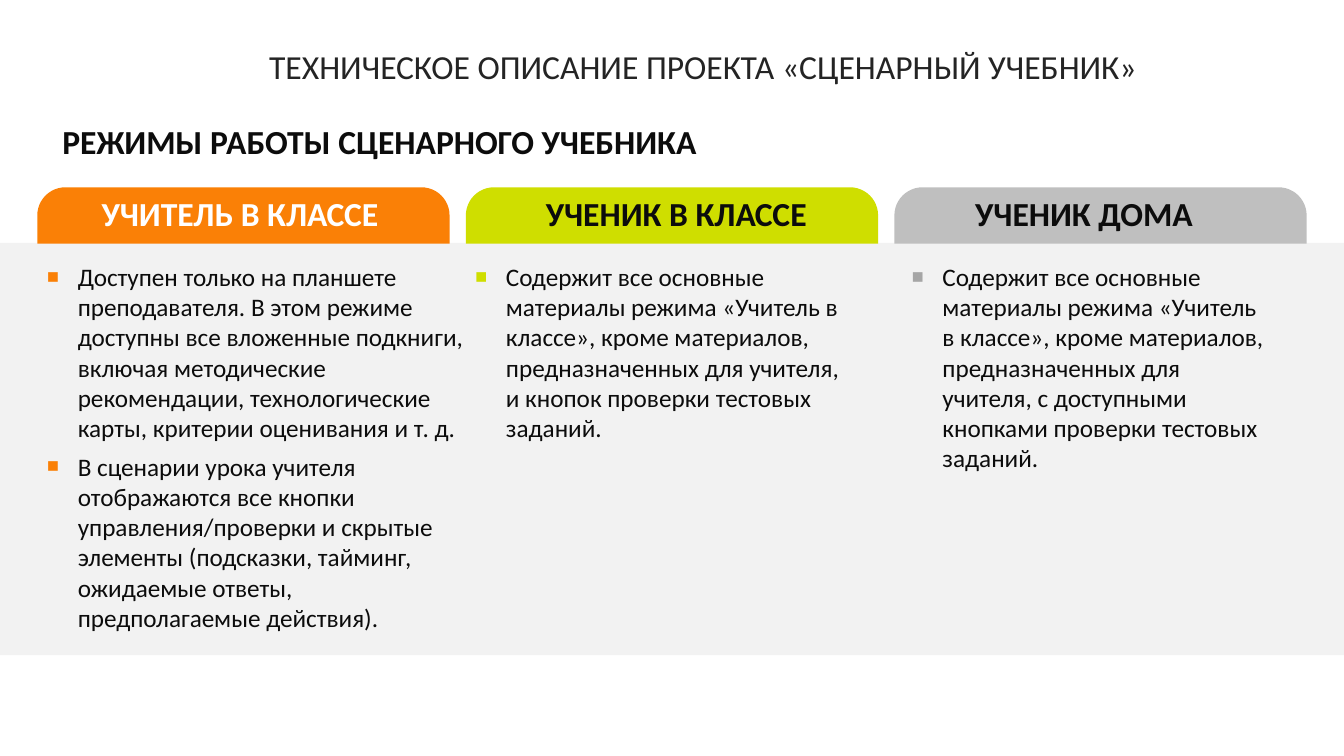
from dataclasses import dataclass

import pptx
import pptx.dml.color
import pptx.enum.shapes
import pptx.enum.text
import pptx.oxml
import pptx.oxml.ns
import pptx.util

Cm = pptx.util.Cm
Pt = pptx.util.Pt
SHAPES = pptx.enum.shapes.MSO_SHAPE
ALIGN = pptx.enum.text.PP_ALIGN


@dataclass(frozen=True)
class Theme:
    font: str = "Calibri"
    heading_size: int = 24
    body_size: int = 18
    title: str = "242424"
    ink: str = "0C0C0C"
    white: str = "FFFFFF"
    panel: str = "F2F2F2"
    orange: str = "FA8006"
    lime: str = "CFDE00"
    silver: str = "BFBFBF"
    silver_bullet: str = "A6A6A6"


THEME = Theme()
COMPARISON_LAYOUT = 4
TAB_LEFT, TAB_TOP, TAB_WIDTH, TAB_HEIGHT, TAB_PITCH = 0.94, 4.72, 10.39, 1.42, 10.8
LIST_TOP, LIST_INDENT = 6.45, 0.79


@dataclass(frozen=True)
class Mode:
    """One column: a coloured tab, its label and its list (lengths in cm)."""
    label: str
    label_left: float
    label_width: float
    label_color: str
    tab_color: str
    bullet_color: str
    list_left: float
    list_width: float
    list_height: float
    items: tuple


MODES = (
    Mode("УЧИТЕЛЬ В КЛАССЕ ", 1.14, 10.01, THEME.white, THEME.orange, THEME.orange,
         0.94, 11, 9.91, (
             "Доступен только на планшете преподавателя. В этом режиме доступны все "
             "вложенные подкниги, включая методические рекомендации, технологические "
             "карты, критерии оценивания и т. д.",
             "В сценарии урока учителя отображаются все кнопки управления/проверки и "
             "скрытые элементы (подсказки, тайминг, ожидаемые ответы, предполагаемые "
             "действия).")),
    Mode("УЧЕНИК В КЛАССЕ ", 12.34, 9.6, THEME.ink, THEME.lime, THEME.lime,
         11.73, 9.8, 4.88, (
             "Содержит все основные материалы режима «Учитель в классе», кроме "
             "материалов, предназначенных для учителя, и кнопок проверки тестовых "
             "заданий.",)),
    Mode("УЧЕНИК ДОМА ", 23.72, 7.39, THEME.ink, THEME.silver, THEME.silver_bullet,
         22.73, 9.6, 5.64, (
             "Содержит все основные материалы режима «Учитель в классе», кроме "
             "материалов, предназначенных для учителя, с доступными кнопками проверки "
             "тестовых заданий.",)),
)


def rgb(color):
    return pptx.dml.color.RGBColor.from_string(color)


def place(holder, left, top, width, height):
    holder.left, holder.top = Cm(left), Cm(top)
    holder.width, holder.height = Cm(width), Cm(height)


def prepare_frame(holder, side_inset=0.25):
    frame = holder.text_frame
    frame.word_wrap = True
    frame.auto_size = pptx.enum.text.MSO_AUTO_SIZE.NONE
    frame.vertical_anchor = pptx.enum.text.MSO_ANCHOR.TOP
    frame.margin_left = frame.margin_right = Cm(side_inset)
    frame.margin_top = frame.margin_bottom = Cm(0.13)
    return frame


def write(paragraph, text, size, color, bold=False, align=ALIGN.LEFT):
    paragraph.alignment = align
    paragraph.space_before = Pt(0)
    run = paragraph.add_run()
    run.text = text
    run.font.name = THEME.font
    run.font.size = Pt(size)
    run.font.bold = bold
    run.font.color.rgb = rgb(color)


def add_bullet(paragraph, color):
    properties = paragraph._p.get_or_add_pPr()
    properties.set("marL", str(Cm(LIST_INDENT)))
    properties.set("indent", str(-Cm(LIST_INDENT)))
    namespace = pptx.oxml.ns.nsdecls("a")
    for xml in (
        f'<a:buClr {namespace}><a:srgbClr val="{color}"/></a:buClr>',
        f'<a:buSzPct {namespace} val="150000"/>',
        f'<a:buFont {namespace} typeface="{THEME.font}"/>',
        f'<a:buChar {namespace} char="▪"/>',
    ):
        properties.append(pptx.oxml.parse_xml(xml))


def add_block(slide, preset, color, left, top, width, height):
    block = slide.shapes.add_shape(preset, Cm(left), Cm(top), Cm(width), Cm(height))
    block.shadow.inherit = False
    block.fill.solid()
    block.fill.fore_color.rgb = rgb(color)
    block.line.fill.background()
    return block


def add_panel(slide):
    panel = add_block(slide, SHAPES.RECTANGLE, THEME.panel, 0, 6.12, 33.87, 10.39)
    # The panel lies behind the lists
    slide.shapes.element.insert(2, panel.element)


def add_tab(slide, mode, left):
    tab = add_block(slide, SHAPES.ROUND_2_SAME_RECTANGLE, mode.tab_color,
                    left, TAB_TOP, TAB_WIDTH, TAB_HEIGHT)
    tab.adjustments[0] = 0.5
    label = slide.shapes.add_textbox(Cm(mode.label_left), Cm(TAB_TOP),
                                     Cm(mode.label_width), Cm(1.27))
    write(prepare_frame(label).paragraphs[0], mode.label, THEME.heading_size,
          mode.label_color, bold=True, align=ALIGN.CENTER)


def fill_heading(holder, text, color, bold, *box):
    place(holder, *box)
    write(prepare_frame(holder).paragraphs[0], text, THEME.heading_size, color, bold)


def fill_list(holder, mode):
    place(holder, mode.list_left, LIST_TOP, mode.list_width, mode.list_height)
    frame = prepare_frame(holder, side_inset=0.23)
    for index, item in enumerate(mode.items):
        paragraph = frame.add_paragraph() if index else frame.paragraphs[0]
        add_bullet(paragraph, mode.bullet_color)
        write(paragraph, item, THEME.body_size, THEME.ink)
        paragraph.space_after = Pt(6)


def main():
    deck = pptx.Presentation()
    deck.slide_width, deck.slide_height = Cm(33.87), Cm(19.05)
    slide = deck.slides.add_slide(deck.slide_layouts[COMPARISON_LAYOUT])
    title, subtitle, *lists = list(slide.placeholders)[:5]

    # Headings
    fill_heading(title, "ТЕХНИЧЕСКОЕ ОПИСАНИЕ ПРОЕКТА «СЦЕНАРНЫЙ УЧЕБНИК»",
                 THEME.title, False, 6.53, 1.02, 23.8, 2.11)
    fill_heading(subtitle, "РЕЖИМЫ РАБОТЫ СЦЕНАРНОГО УЧЕБНИКА",
                 THEME.ink, True, 1.32, 2.92, 18.01, 1.27)

    # Columns of modes
    add_panel(slide)
    for column, (mode, holder) in enumerate(zip(MODES, lists)):
        add_tab(slide, mode, TAB_LEFT + column * TAB_PITCH)
        fill_list(holder, mode)

    deck.save("out.pptx")


if __name__ == "__main__":
    main()
